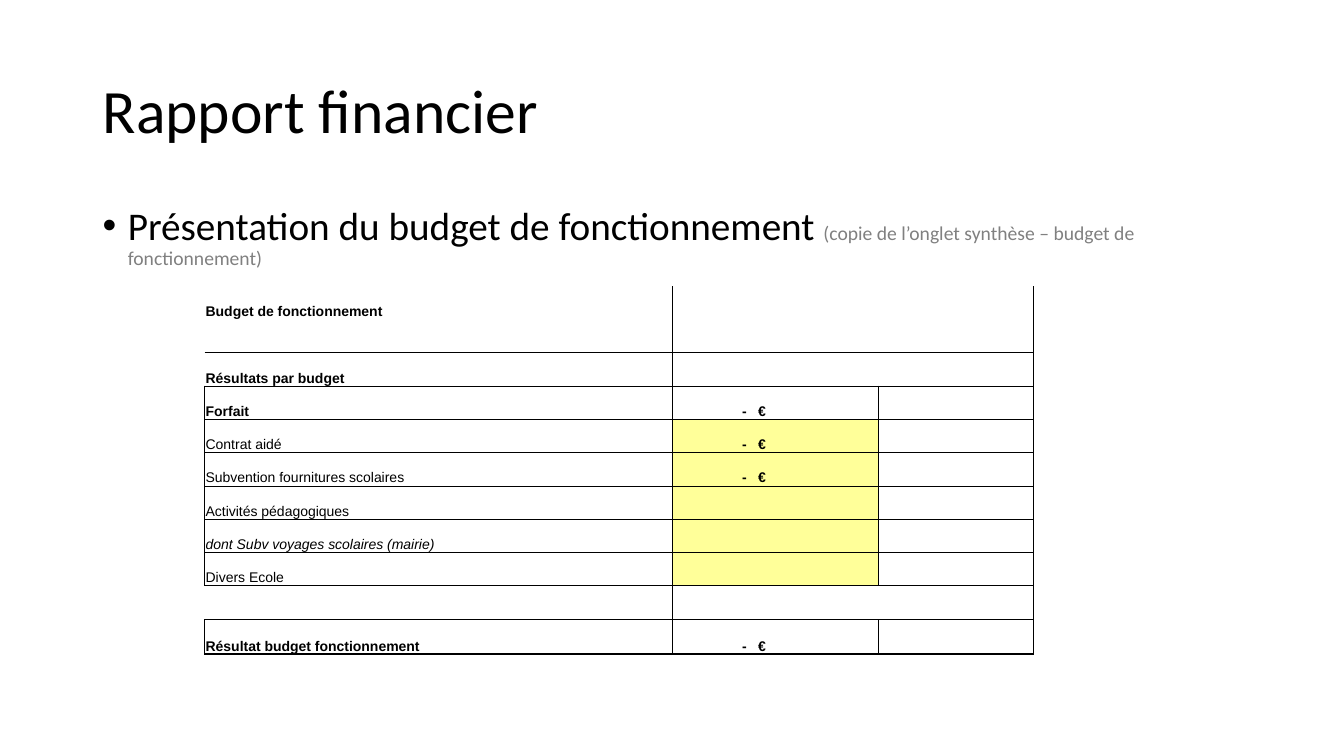
from pptx import Presentation
from pptx import util as u
from pptx.dml.color import RGBColor
from pptx.enum import text
from pptx.oxml.ns import qn
from lxml import etree

BLACK, GREY, YELLOW = "000000", "808080", "FFFF99"
COLS = [4.64, 2.04, 1.54]
HEIGHTS = [0.33] * 9 + [0.34] * 2
AMOUNT = "-\t€"
# label, amount, label format, amount fill, boxed row
ROWS = [
    ("Budget de fonctionnement", "", {"bold": True}, None, False),
    ("", "", {}, None, False),
    ("Résultats par budget", "", {"bold": True}, None, False),
    ("Forfait", AMOUNT, {"bold": True}, None, True),
    ("Contrat aidé", AMOUNT, {}, YELLOW, True),
    ("Subvention fournitures scolaires", AMOUNT, {}, YELLOW, True),
    ("Activités pédagogiques", "", {}, YELLOW, True),
    ("dont Subv voyages scolaires (mairie)", "", {"italic": True}, YELLOW, True),
    ("Divers Ecole", "", {}, YELLOW, True),
    ("", "", {}, None, False),
    ("Résultat budget fonctionnement", AMOUNT, {"bold": True}, None, True),
]
# widths of the horizontal rules, from the top of the table to its bottom
RULES = [0, 0] + [0.5] * 8 + [1, 1]


def color(value):
    return RGBColor.from_string(value)


def add_run(p, words, size=10, font="Arial", fill=BLACK, bold=False, italic=False):
    r = p.add_run()
    r.text = words
    r.font.size = u.Pt(size)
    r.font.name = font
    r.font.color.rgb = color(fill)
    r.font.bold, r.font.italic = bold, italic


def add_text(s, left, top, width, height, anchor):
    box = s.shapes.add_textbox(*map(u.Inches, (left, top, width, height)))
    tf = box.text_frame
    tf.word_wrap = True
    tf.vertical_anchor = anchor
    p = tf.paragraphs[0]
    p.line_spacing = 0.9
    return p


def add_bullet(p, indent):
    pPr = p._p.get_or_add_pPr()
    pPr.set("marL", str(u.Inches(indent)))
    pPr.set("indent", str(-u.Inches(indent)))
    etree.SubElement(pPr, qn("a:buFont")).set("typeface", "Arial")
    etree.SubElement(pPr, qn("a:buChar")).set("char", "•")


def add_tab(p, position):
    tabs = etree.SubElement(p._p.get_or_add_pPr(), qn("a:tabLst"))
    tab = etree.SubElement(tabs, qn("a:tab"))
    tab.set("pos", str(u.Inches(position)))
    tab.set("algn", "l")


def set_borders(cell, left, right, top, bottom):
    tcPr = cell._tc.get_or_add_tcPr()
    for i, (side, width) in enumerate(zip("LRTB", (left, right, top, bottom))):
        ln = etree.Element(qn("a:ln" + side))
        ln.set("w", str(u.Pt(width)))
        if width:
            fill = etree.SubElement(ln, qn("a:solidFill"))
            etree.SubElement(fill, qn("a:srgbClr")).set("val", BLACK)
        else:
            etree.SubElement(ln, qn("a:noFill"))
        tcPr.insert(i, ln)


def fill_cell(cell, words, fill, **style):
    cell.vertical_anchor = text.MSO_ANCHOR.BOTTOM
    cell.margin_left = cell.margin_right = cell.margin_top = u.Inches(0.01)
    cell.margin_bottom = 0
    if fill:
        cell.fill.solid()
        cell.fill.fore_color.rgb = color(fill)
    else:
        cell.fill.background()
    if words:
        add_run(cell.text_frame.paragraphs[0], words, **style)


def add_budget(s, left, top):
    frame = s.shapes.add_table(len(ROWS), len(COLS), u.Inches(left), u.Inches(top),
                               u.Inches(sum(COLS)), u.Inches(sum(HEIGHTS)))
    table = frame.table
    table.first_row = table.horz_banding = False
    for column, width in zip(table.columns, COLS):
        column.width = u.Inches(width)
    for i, (label, amount, style, fill, boxed) in enumerate(ROWS):
        table.rows[i].height = u.Inches(HEIGHTS[i])
        name, value, note = (table.cell(i, c) for c in range(3))
        fill_cell(name, label, None, **style)
        fill_cell(value, amount, fill, bold=True)
        fill_cell(note, "", None)
        if amount:
            value.margin_left = u.Inches(0.69)
            add_tab(value.text_frame.paragraphs[0], 0.16)
        # vertical rules: only boxed rows close on the left and split the amount
        edge = RULES[i + 1] if boxed else 0
        verticals = [edge, 1, 0.5 if boxed else 0, 1]
        for c, cell in enumerate((name, value, note)):
            set_borders(cell, verticals[c], verticals[c + 1], RULES[i], RULES[i + 1])


def main():
    prs = Presentation()
    prs.slide_width, prs.slide_height = u.Inches(13.33), u.Inches(7.5)
    s = prs.slides.add_slide(prs.slide_layouts[6])

    # Title
    p = add_text(s, 0.92, 0.4, 11.5, 1.45, text.MSO_ANCHOR.MIDDLE)
    add_run(p, "Rapport financier", size=44, font="Calibri")

    # Bullet
    p = add_text(s, 0.92, 2, 11.5, 4.76, text.MSO_ANCHOR.TOP)
    p.space_before = u.Pt(10)
    add_bullet(p, 0.25)
    add_run(p, "Présentation du budget de fonctionnement ", size=28, font="Calibri")
    add_run(p, "(copie de l’onglet synthèse – budget de fonctionnement)",
            size=14, font="Calibri", fill=GREY)

    # Budget table
    add_budget(s, 2.03, 2.84)
    prs.save("out.pptx")


if __name__ == "__main__":
    main()
